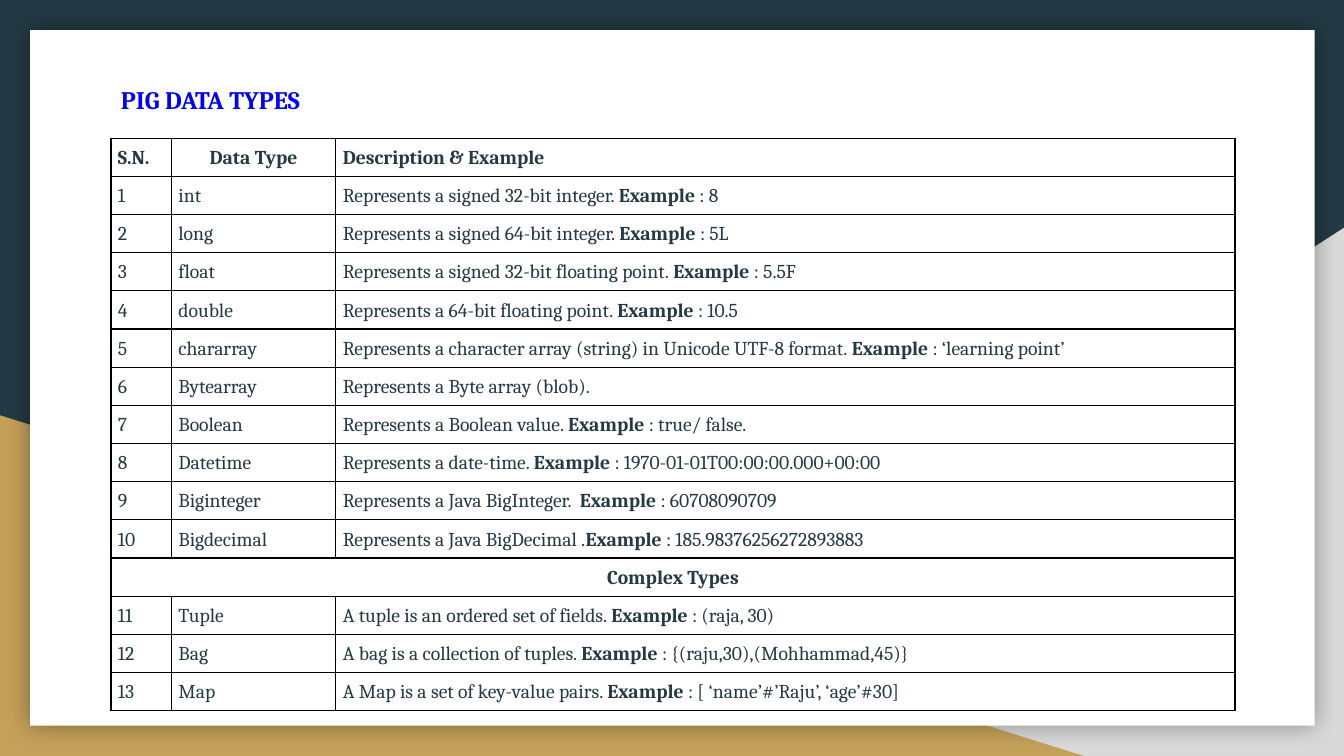
"""Build the slide that lists the Pig data types in a table."""
from dataclasses import dataclass

from lxml.etree import SubElement as Sub
from pptx import Presentation
from pptx.dml.color import RGBColor as RGB
from pptx.enum.shapes import MSO_SHAPE as Kind
from pptx.enum.text import MSO_ANCHOR as Anchor, MSO_AUTO_SIZE as Fit, PP_ALIGN as Align
from pptx.oxml.ns import qn
from pptx.util import Inches, Pt


@dataclass(frozen=True)
class Theme:
    """Colours and type sizes of the slide."""
    font: str = "Cambria"
    dark: str = "233A44"
    grey: str = "D9D9D9"
    gold: str = "C4A15A"
    white: str = "FFFFFF"
    blue: str = "0000FF"
    black: str = "000000"
    head: int = 18
    body: int = 14


@dataclass(frozen=True)
class Panel:
    """One flat shape of the backdrop."""
    kind: Kind
    left: float
    top: float
    width: float
    height: float
    fill: str
    flip: bool = False
    glow: bool = False


@dataclass(frozen=True)
class Entry:
    """One data type with its description and example value."""
    name: str
    text: str
    sample: str = ""


THEME = Theme()
PANELS = [
    Panel(Kind.RIGHT_TRIANGLE, 5.22, 2.26, 8.11, 5.24, THEME.grey, flip=True),
    Panel(Kind.RIGHT_TRIANGLE, 0, 4.12, 10.75, 3.38, THEME.gold),
    Panel(Kind.RECTANGLE, 0.3, 0.3, 12.74, 6.9, THEME.white, glow=True),
]
HEADS = ["S.N.", "Data Type", "Description & Example"]
WIDTHS = [0.6, 1.63, 8.92]
ROW = 0.33
INSET = 0.07
SIMPLE = [
    Entry("int", "Represents a signed 32-bit integer. ", "8"),
    Entry("long", "Represents a signed 64-bit integer. ", "5L"),
    Entry("float", "Represents a signed 32-bit floating point. ", "5.5F"),
    Entry("double", "Represents a 64-bit floating point. ", "10.5"),
    Entry("chararray", "Represents a character array (string) in Unicode UTF-8 format. ",
          "‘learning point’"),
    Entry("Bytearray", "Represents a Byte array (blob)."),
    Entry("Boolean", "Represents a Boolean value. ", "true/ false."),
    Entry("Datetime", "Represents a date-time. ", "1970-01-01T00:00:00.000+00:00"),
    Entry("Biginteger", "Represents a Java BigInteger.  ", "60708090709"),
    Entry("Bigdecimal", "Represents a Java BigDecimal .", "185.98376256272893883"),
]
COMPLEX = [
    Entry("Tuple", "A tuple is an ordered set of fields. ", "(raja, 30)"),
    Entry("Bag", "A bag is a collection of tuples. ", "{(raju,30),(Mohhammad,45)}"),
    Entry("Map", "A Map is a set of key-value pairs. ", "[ ‘name’#’Raju’, ‘age’#30]"),
]


def style(run, size: int, tint: str, bold: bool) -> None:
    """Set the font of a run."""
    font = run.font
    font.name, font.size, font.bold = THEME.font, Pt(size), bold
    font.color.rgb = RGB.from_string(tint)


def draw(slide, item: Panel) -> None:
    """Draw one backdrop shape."""
    box = map(Inches, (item.left, item.top, item.width, item.height))
    shape = slide.shapes.add_shape(item.kind, *box)
    shape.shadow.inherit = False
    shape.fill.solid()
    shape.fill.fore_color.rgb = RGB.from_string(item.fill)
    shape.line.fill.background()
    props = shape.element.spPr
    if item.flip:
        props.find(qn("a:xfrm")).set("flipH", "1")
    if item.glow:
        glow = Sub(props.find(qn("a:effectLst")), qn("a:outerShdw"),
                   blurRad=str(Pt(18)), dist="0", dir="0", algn="ctr", rotWithShape="0")
        tint = Sub(glow, qn("a:srgbClr"), val=THEME.black)
        Sub(tint, qn("a:alpha"), val="40000")


def frame(cell) -> None:
    """Give a cell its insets, clear fill and thin borders."""
    cell.margin_left = cell.margin_right = Inches(INSET)
    cell.margin_top = cell.margin_bottom = Inches(INSET)
    cell.vertical_anchor = Anchor.MIDDLE
    cell.fill.background()
    props = cell._tc.get_or_add_tcPr()
    for spot, side in enumerate("LRTB"):
        line = Sub(props, qn(f"a:ln{side}"), w=str(Pt(1)))
        Sub(Sub(line, qn("a:solidFill")), qn("a:srgbClr"), val=THEME.black)
        props.insert(spot, line)


def write(cell, text: str, bold: bool = False, sample: str = "", mid: bool = False) -> None:
    """Write a cell's text, followed by its example if there is one."""
    para = cell.text_frame.paragraphs[0]
    para.text = text
    para.alignment = Align.CENTER if mid else Align.LEFT
    para.line_spacing = 1.07
    para.space_after = Pt(8)
    style(para.runs[0], THEME.body, THEME.dark, bold)
    if sample:
        for part, heavy in (("Example", True), (f" : {sample}", False)):
            run = para.add_run()
            run.text = part
            style(run, THEME.body, THEME.dark, heavy)


def fill(grid, top: int, first: int, items: list[Entry]) -> None:
    """Write numbered entries from the given row down."""
    for step, item in enumerate(items):
        row = top + step
        write(grid.cell(row, 0), str(first + step))
        write(grid.cell(row, 1), item.name)
        write(grid.cell(row, 2), item.text, sample=item.sample)


def chart(slide) -> None:
    """Add the table of data types."""
    split = len(SIMPLE) + 1
    rows = split + 1 + len(COMPLEX)
    grid = slide.shapes.add_table(rows, len(HEADS), Inches(1.1), Inches(1.37),
                                  Inches(sum(WIDTHS)), Inches(ROW * rows)).table
    grid.first_row = grid.horz_banding = False
    for col, width in zip(grid.columns, WIDTHS):
        col.width = Inches(width)
    for row in grid.rows:
        row.height = Inches(ROW)
    for cell in grid.iter_cells():
        frame(cell)
    for col, text in enumerate(HEADS):
        write(grid.cell(0, col), text, bold=True, mid=col == 1)
    fill(grid, 1, 1, SIMPLE)
    grid.cell(split, 0).merge(grid.cell(split, len(HEADS) - 1))
    write(grid.cell(split, 0), "Complex Types", bold=True, mid=True)
    fill(grid, split + 1, split, COMPLEX)


def label(slide) -> None:
    """Place the title in front of the backdrop."""
    title = slide.shapes.title
    title.left, title.top = Inches(1.1), Inches(0.79)
    title.width, title.height = Inches(2.33), Inches(0.4)
    text = title.text_frame
    text.text = "PIG DATA TYPES"
    text.word_wrap = True
    text.auto_size = Fit.SHAPE_TO_FIT_TEXT
    text.vertical_anchor = Anchor.TOP
    text.paragraphs[0].alignment = Align.LEFT
    style(text.paragraphs[0].runs[0], THEME.head, THEME.blue, True)
    title.element.getparent().append(title.element)


def main() -> None:
    """Build and save the slide."""
    deck = Presentation()
    deck.slide_width, deck.slide_height = Inches(13.33), Inches(7.5)
    slide = deck.slides.add_slide(deck.slide_layouts[5])
    back = slide.background.fill
    back.solid()
    back.fore_color.rgb = RGB.from_string(THEME.dark)
    for item in PANELS:
        draw(slide, item)
    chart(slide)
    label(slide)
    deck.save("out.pptx")


if __name__ == "__main__":
    main()
